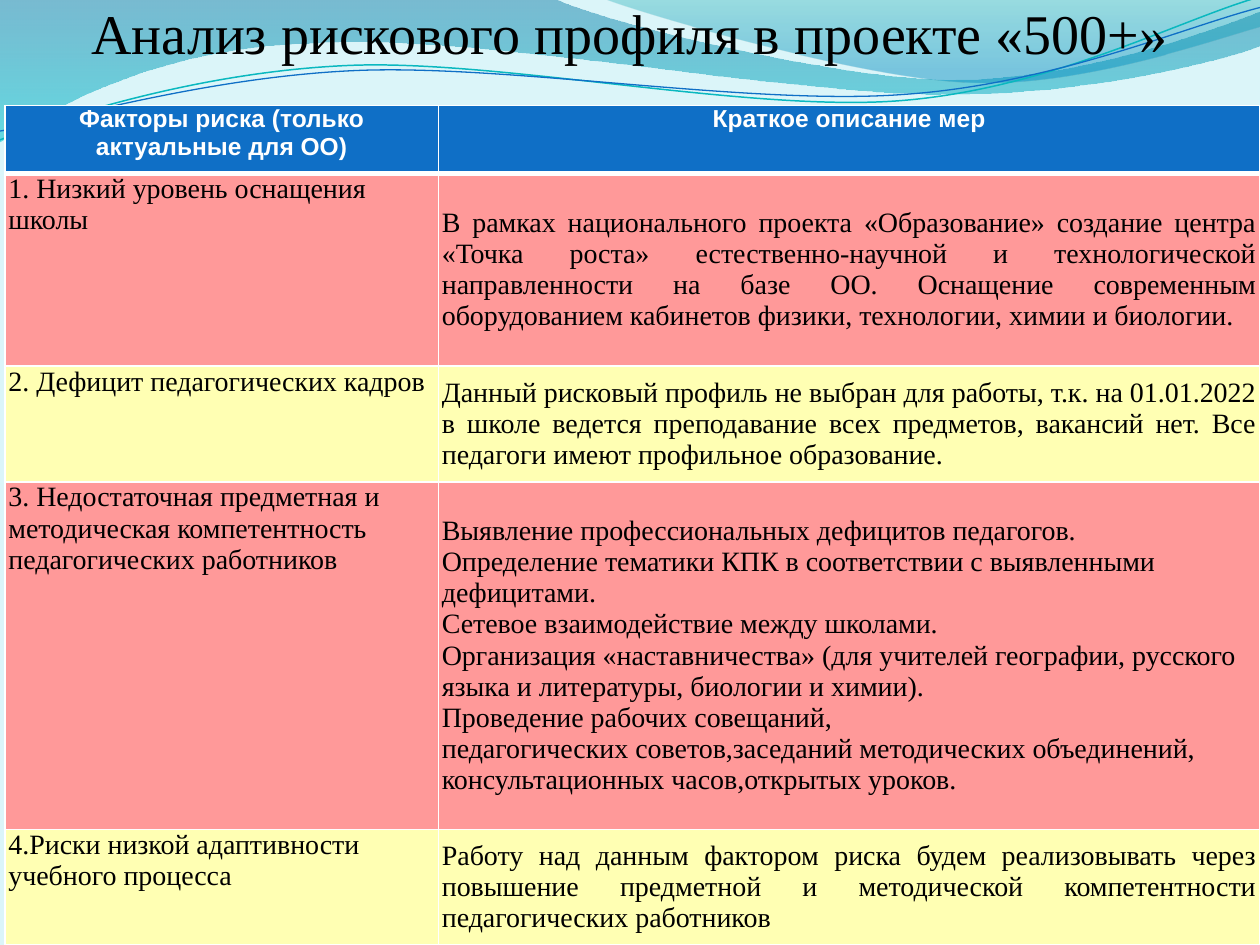
from dataclasses import dataclass
from math import cos, radians, sin

from lxml import etree
from pptx import Presentation
from pptx.dml.color import RGBColor
from pptx.enum.text import MSO_ANCHOR, PP_ALIGN
from pptx.oxml.ns import qn
from pptx.util import Pt

LEFT, CENTER, JUSTIFY = PP_ALIGN.LEFT, PP_ALIGN.CENTER, PP_ALIGN.JUSTIFY
TOP, MIDDLE, BOTTOM = MSO_ANCHOR.TOP, MSO_ANCHOR.MIDDLE, MSO_ANCHOR.BOTTOM

BLACK = RGBColor(0x00, 0x00, 0x00)
WHITE = RGBColor(0xFF, 0xFF, 0xFF)
BACKGROUND = RGBColor(0xDB, 0xF5, 0xF9)
BLUE = RGBColor(0x0F, 0x6F, 0xC6)
TEAL = RGBColor(0x0A, 0xB8, 0xBF)
PINK = RGBColor(0xFF, 0x99, 0x99)
YELLOW = RGBColor(0xFF, 0xFF, 0xB3)

SERIF, SANS = "Times New Roman", "Arial"
COLUMN_WIDTHS = (247.7, 469.5)
HEADER_HEIGHT = 38.9


@dataclass(frozen=True)
class Stop:
    position: float
    color: RGBColor
    opacity: int


@dataclass(frozen=True)
class Wave:
    """Outline in points: one-point segments are straight, three-point ones curved."""
    start: tuple
    segments: tuple
    stops: tuple = ()
    line_color: RGBColor | None = None
    line_width: float = 0
    center: tuple = (0, 0)
    rotation: float = 0


@dataclass(frozen=True)
class Risk:
    factor: str
    measures: tuple
    height: float
    color: RGBColor
    alignment: PP_ALIGN = JUSTIFY


WAVES = (
    Wave((0, 0), (
        ((316.8, -0.7),),
        ((342.7, 12.2), (478.1, 45.4), (545.8, 45.4)),
        ((614.2, 45.4), (689.8, 18.7), (720, 6.5)),
        ((720.7, 25.9),),
        ((707.8, 31.7), (626.4, 54.7), (537.1, 54)),
        ((447.8, 54), (275, 20.2), (185, 24.5)),
        ((92.9, 25.9), (33.1, 59.8), (-0.7, 81.4)),
        ((0, 0),),
    ), stops=(Stop(0, RGBColor(0x00, 0x74, 0xA1), 45),
              Stop(1, RGBColor(0x00, 0xC6, 0xCF), 55))),
    Wave((344.9, -0.7), (
        ((366.5, 7.9), (491, 44.6), (553.7, 46.8)),
        ((616.3, 49.7), (691.9, 23), (720, 15.1)),
        ((720, 0),),
        ((344.9, -0.7),),
    ), stops=(Stop(0, RGBColor(0x00, 0xA1, 0xA9), 30),
              Stop(0.8, RGBColor(0x00, 0x8B, 0xBF), 45))),
    Wave((0, 79.9), (
        ((34.6, 67), (113.8, 41), (199.4, 37.4)),
        ((284.4, 33.8), (427, 64.1), (513.4, 57.6)),
        ((599.8, 51.1), (675.4, 10.8), (718.6, -1.4)),
    ), line_color=TEAL, line_width=0.85, center=(359.3, 41.4), rotation=357.3),
    Wave((0, 74.9), (
        ((33.8, 69.1), (118.1, 43.9), (203.8, 40.3)),
        ((290.2, 36.7), (429.8, 60.5), (516.2, 54)),
        ((601.9, 48.2), (677.5, 15.1), (720, 4.3)),
    ), line_color=BLUE, line_width=0.75, center=(359.6, 42.5), rotation=357.3),
)

TITLE = "Анализ рискового профиля в проекте «500+»"
HEADERS = ("Факторы риска (только актуальные для ОО)", "Краткое описание мер")
RISKS = (
    Risk("1. Низкий уровень оснащения школы", (
        "В рамках национального проекта «Образование» создание центра «Точка роста» "
        "естественно-научной и технологической направленности на базе ОО. Оснащение "
        "современным оборудованием кабинетов физики, технологии, химии и биологии.",
    ), 110.1, PINK),
    Risk("2. Дефицит педагогических кадров", (
        "Данный рисковый профиль не выбран для работы, т.к. на 01.01.2022 в школе ведется "
        "преподавание всех предметов, вакансий нет. Все педагоги имеют профильное "
        "образование.",
    ), 66.2, YELLOW),
    Risk("3. Недостаточная предметная и методическая компетентность педагогических работников", (
        "Выявление профессиональных дефицитов педагогов.",
        "Определение тематики КПК в соответствии с выявленными дефицитами.",
        "Сетевое взаимодействие между школами.",
        "Организация «наставничества» (для учителей географии, русского языка и литературы, "
        "биологии и химии).",
        "Проведение рабочих совещаний,",
        "педагогических советов,заседаний методических объединений, консультационных "
        "часов,открытых уроков.",
    ), 198.5, PINK, LEFT),
    Risk("4.Риски низкой адаптивности учебного процесса", (
        "Работу над данным фактором риска будем реализовывать через повышение предметной и "
        "методической компетентности педагогических работников",
    ), 66.2, YELLOW),
)


def write_text(frame, *paragraphs: str, size: float = 16, font: str = SERIF,
               color: RGBColor = BLACK, bold: bool = False,
               alignment: PP_ALIGN = LEFT) -> None:
    for index, text in enumerate(paragraphs):
        paragraph = frame.add_paragraph() if index else frame.paragraphs[0]
        paragraph.alignment = alignment
        run = paragraph.add_run()
        run.text = text
        run.font.size, run.font.name, run.font.bold = Pt(size), font, bold
        run.font.color.rgb = color


def turn_back(point: tuple, wave: Wave) -> tuple:
    """Undo the rotation of the wave, so that the shape itself can carry it."""
    angle = radians(-wave.rotation)
    center_x, center_y = wave.center
    x, y = point[0] - center_x, point[1] - center_y
    return (Pt(center_x + x * cos(angle) - y * sin(angle)),
            Pt(center_y + x * sin(angle) + y * cos(angle)))


def draw_wave(slide, wave: Wave) -> None:
    builder = slide.shapes.build_freeform(*turn_back(wave.start, wave), scale=1.0)
    builder.add_line_segments([turn_back(point, wave) for segment in wave.segments
                               for point in segment], close=bool(wave.stops))
    shape = builder.convert_to_shape()
    shape.shadow.inherit = False
    shape.rotation = wave.rotation

    # Join the three points of each curved segment into one Bezier curve
    steps = iter(shape.element.xpath(".//a:lnTo"))
    for segment in wave.segments:
        first, *others = [next(steps) for _ in segment]
        if others:
            first.tag = qn("a:cubicBezTo")
        for step in others:
            first.append(step[0])
            step.getparent().remove(step)

    if not wave.stops:
        shape.fill.background()
        shape.line.color.rgb = wave.line_color
        shape.line.width = Pt(wave.line_width)
        return
    shape.line.fill.background()
    shape.fill.gradient()
    shape.fill.gradient_angle = 270
    for gradient_stop, stop in zip(shape.fill.gradient_stops, wave.stops):
        gradient_stop.color.rgb = stop.color
        gradient_stop.position = stop.position
    for color, stop in zip(shape.element.xpath(".//a:gs/a:srgbClr"), wave.stops):
        etree.SubElement(color, qn("a:alpha"), val=str(stop.opacity * 1000))


def format_cell(cell, color: RGBColor, anchor: MSO_ANCHOR = TOP, bottom: float = 1) -> None:
    cell.margin_left = cell.margin_right = Pt(2)
    cell.margin_top = cell.margin_bottom = 0
    cell.vertical_anchor = anchor
    properties = cell._tc.get_or_add_tcPr()
    for side, width in (("L", 1), ("R", 1), ("T", 1), ("B", bottom)):
        border = etree.SubElement(properties, qn(f"a:ln{side}"), w=str(Pt(width)))
        fill = etree.SubElement(border, qn("a:solidFill"))
        etree.SubElement(fill, qn("a:srgbClr"), val=str(WHITE))
    cell.fill.solid()
    cell.fill.fore_color.rgb = color


def draw_risk_table(slide) -> None:
    heights = (HEADER_HEIGHT, *(risk.height for risk in RISKS))
    table = slide.shapes.add_table(len(heights), len(COLUMN_WIDTHS), Pt(2.8), Pt(60.2),
                                   Pt(sum(COLUMN_WIDTHS)), Pt(sum(heights))).table
    for column, width in zip(table.columns, COLUMN_WIDTHS):
        column.width = Pt(width)
    for row, height in zip(table.rows, heights):
        row.height = Pt(height)
    for cell, header in zip(table.rows[0].cells, HEADERS):
        format_cell(cell, BLUE, bottom=3)
        write_text(cell.text_frame, header, size=14, font=SANS, color=WHITE, bold=True,
                   alignment=CENTER)
    for index, risk in enumerate(RISKS, start=1):
        factor, measures = table.rows[index].cells
        format_cell(factor, risk.color)
        format_cell(measures, risk.color, MIDDLE)
        write_text(factor.text_frame, risk.factor)
        write_text(measures.text_frame, *risk.measures, alignment=risk.alignment)


def main() -> None:
    presentation = Presentation()
    presentation.slide_width, presentation.slide_height = Pt(720), Pt(540)
    slide = presentation.slides.add_slide(presentation.slide_layouts[5])
    slide.background.fill.solid()
    slide.background.fill.fore_color.rgb = BACKGROUND

    # Title, moved in front of the waves
    title = slide.shapes.title
    for wave in WAVES:
        draw_wave(slide, wave)
    slide.shapes.element.append(title.element)
    title.left, title.top, title.width, title.height = Pt(36), Pt(15), Pt(648), Pt(22.5)
    frame = title.text_frame
    frame.margin_left = frame.margin_right = frame.margin_bottom = 0
    frame.margin_top = Pt(3.6)
    frame.vertical_anchor = BOTTOM
    frame.word_wrap = True
    write_text(frame, TITLE, size=32, alignment=CENTER)

    # Risk factors and measures
    draw_risk_table(slide)
    presentation.save("out.pptx")


if __name__ == "__main__":
    main()
